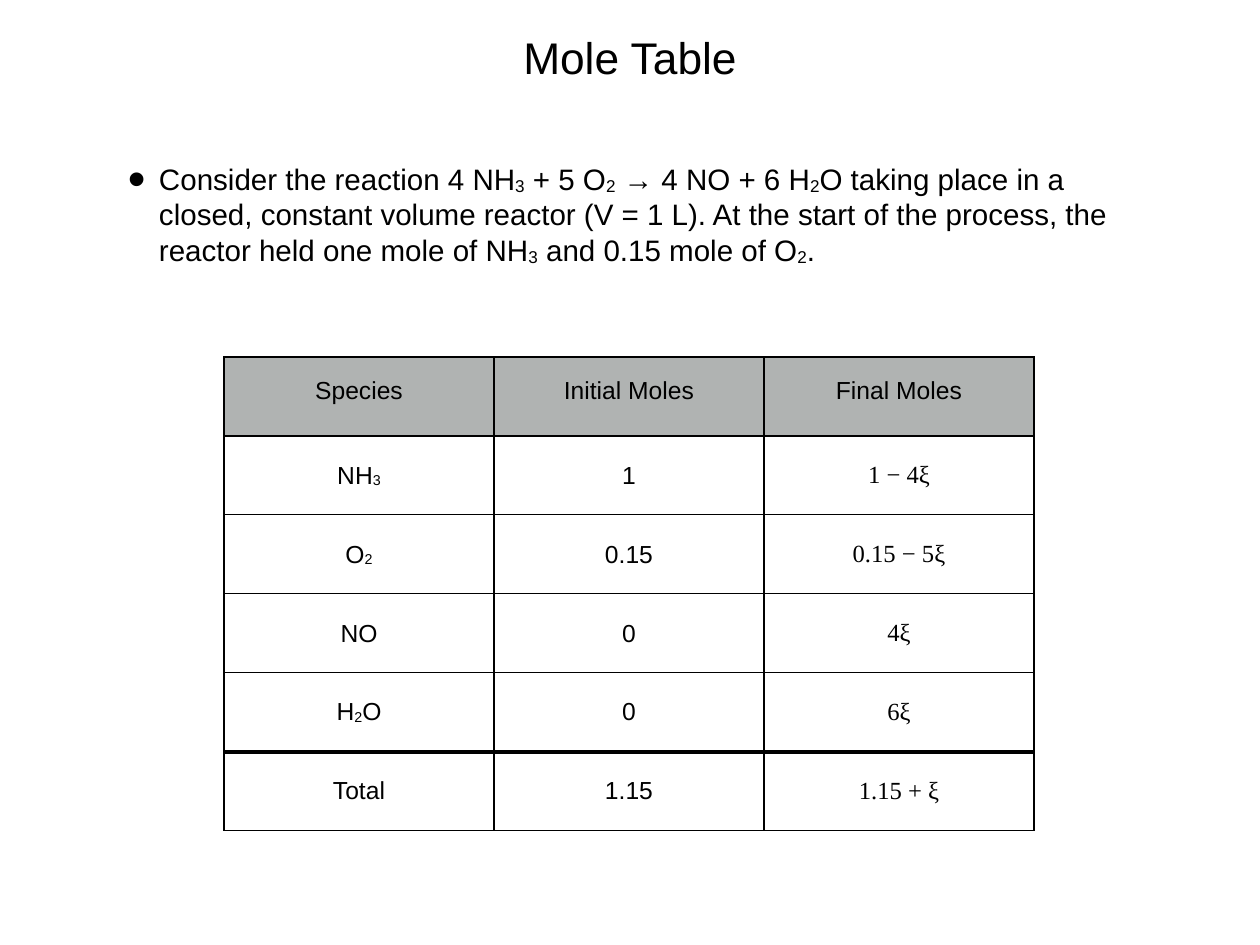
from lxml.etree import SubElement as Sub
from pptx import Presentation
from pptx.dml.color import RGBColor
from pptx.enum.text import MSO_ANCHOR as Anchor, MSO_AUTO_SIZE as Fit, PP_ALIGN as Align
from pptx.oxml.ns import qn
from pptx.util import Pt

# Content: an underscore marks the next digit as a subscript
TITLE = "Mole Table"
BODY = (
    "Consider the reaction 4 NH_3 + 5 O_2 → 4 NO + 6 H_2O taking place in a "
    "closed, constant volume reactor (V = 1 L). At the start of the process, "
    "the reactor held one mole of NH_3 and 0.15 mole of O_2."
)
ROWS = [
    ("Species", "Initial Moles", "Final Moles"),
    ("NH_3", "1", "1 − 4ξ"),
    ("O_2", "0.15", "0.15 − 5ξ"),
    ("NO", "0", "4ξ"),
    ("H_2O", "0", "6ξ"),
    ("Total", "1.15", "1.15 + ξ"),
]

BLACK = RGBColor(0x00, 0x00, 0x00)
WHITE = RGBColor(0xFF, 0xFF, 0xFF)
GREY = RGBColor(0xB0, 0xB3, 0xB2)
SANS, SERIF = "Arial", "Times New Roman"

# Lengths in px
PX = 10320
WIDE, HIGH = 1260, 945
HEAD_BOX = (123, 25, 1014, 123)
BODY_BOX = (123, 156, 1014, 149)
LEFT, TOP, COL, ROW = 224, 357, 270, 79
BOX_PAD, CELL_PAD, INDENT = 5, 6, 31


def write(frame, text, size, font=SANS, align=Align.CENTER, line=1.0, before=0):
    para = frame.paragraphs[0]
    para.alignment = align
    para.line_spacing = line
    para.space_before = Pt(before)

    def add(part, sub=False):
        if not part:
            return
        run = para.add_run()
        run.text = part
        run.font.size = Pt(size)
        run.font.name = font
        run.font.bold = False
        run.font.color.rgb = BLACK
        if sub:
            run.font._element.set("baseline", "-6000")

    first, *rest = text.split("_")
    add(first)
    for part in rest:
        add(part[0], sub=True)
        add(part[1:])
    return para


def pad(item, size):
    item.margin_left = item.margin_right = size * PX
    item.margin_top = item.margin_bottom = size * PX


def place(shape, box):
    shape.left, shape.top, shape.width, shape.height = [n * PX for n in box]
    frame = shape.text_frame
    frame.word_wrap = True
    frame.auto_size = Fit.NONE
    frame.vertical_anchor = Anchor.TOP
    pad(frame, BOX_PAD)
    return frame


def bullet(para):
    props = para._p.get_or_add_pPr()
    props.set("marL", str(INDENT * PX))
    props.set("indent", str(-INDENT * PX))
    color = Sub(props, qn("a:buClr"))
    Sub(color, qn("a:srgbClr"), val=str(BLACK))
    Sub(props, qn("a:buSzPct"), val="171000")
    Sub(props, qn("a:buFont"), typeface=SANS)
    Sub(props, qn("a:buChar"), char="•")


def border(cell, **widths):
    props = cell._tc.get_or_add_tcPr()
    for side in "LRTB":
        line = Sub(props, qn("a:ln" + side), w=str(Pt(widths.get(side, 1))))
        fill = Sub(line, qn("a:solidFill"))
        Sub(fill, qn("a:srgbClr"), val=str(BLACK))


def main():
    deck = Presentation()
    deck.slide_width, deck.slide_height = WIDE * PX, HIGH * PX
    slide = deck.slides.add_slide(deck.slide_layouts[1])
    slide.background.fill.solid()
    slide.background.fill.fore_color.rgb = WHITE

    # Title and reaction
    write(place(slide.shapes.title, HEAD_BOX), TITLE, 36)
    body = place(slide.placeholders[1], BODY_BOX)
    bullet(write(body, BODY, 24, align=Align.LEFT, before=6))

    # Mole table
    rows, cols = len(ROWS), len(ROWS[0])
    box = (LEFT, TOP, cols * COL, rows * ROW)
    table = slide.shapes.add_table(rows, cols, *[n * PX for n in box]).table
    table.first_row = table.horz_banding = False
    for col in table.columns:
        col.width = COL * PX
    for row in table.rows:
        row.height = ROW * PX
    last = rows - 1
    for r, row in enumerate(ROWS):
        for c, text in enumerate(row):
            cell = table.cell(r, c)
            head = r == 0
            border(cell, T=3 if r == last else 1, B=3 if r == last - 1 else 1)
            cell.fill.solid()
            cell.fill.fore_color.rgb = GREY if head else WHITE
            cell.vertical_anchor = Anchor.TOP if head else Anchor.MIDDLE
            pad(cell, CELL_PAD)
            font = SERIF if c == cols - 1 and not head else SANS
            write(cell.text_frame, text, 20, font=font, line=1.5 if head else 1.0)

    deck.save("out.pptx")


if __name__ == "__main__":
    main()
